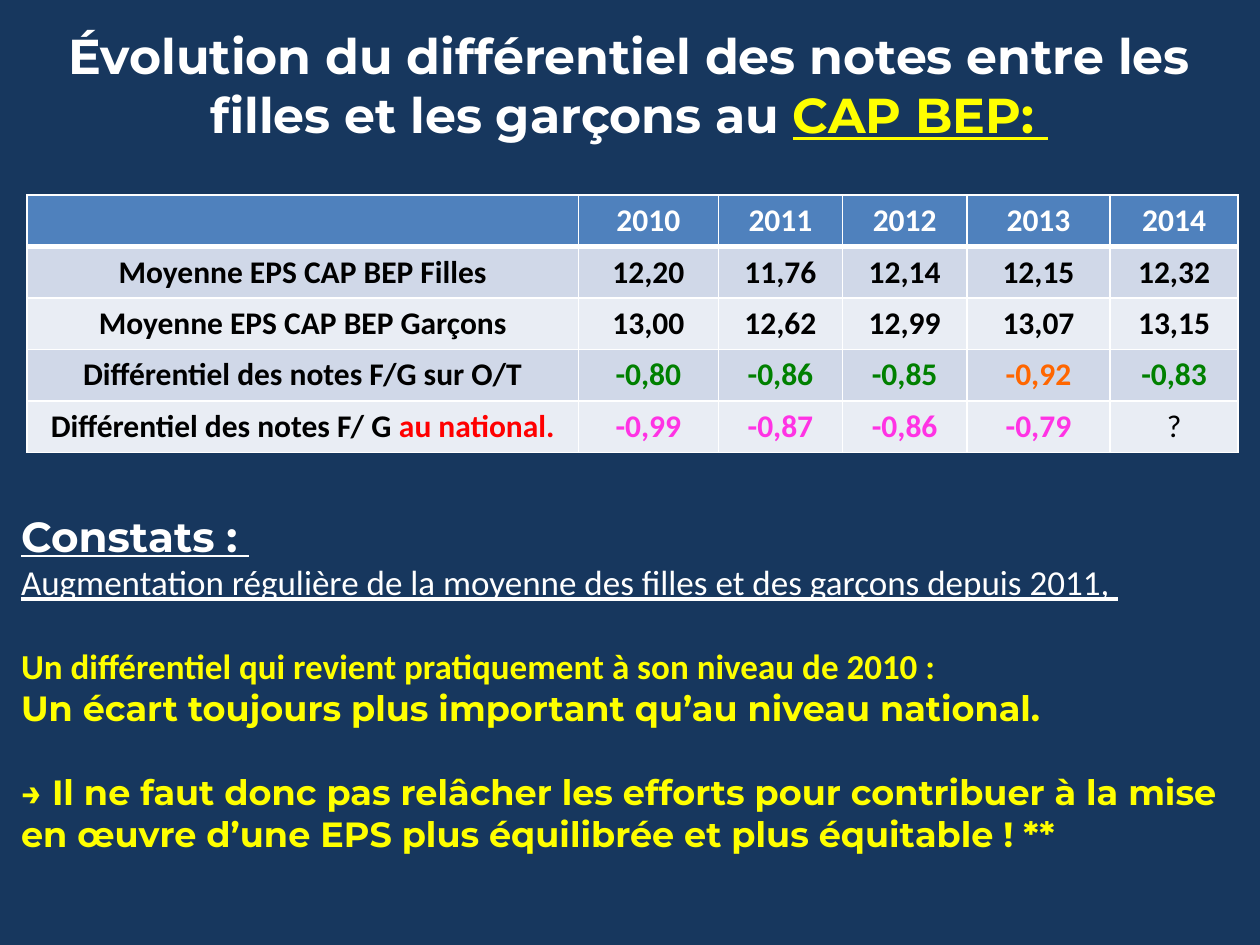
from dataclasses import dataclass

from lxml import etree
from pptx import Presentation
from pptx.dml.color import RGBColor
from pptx.enum.text import MSO_ANCHOR, PP_ALIGN
from pptx.oxml.ns import qn
from pptx.util import Pt

CENTER, LEFT = PP_ALIGN.CENTER, PP_ALIGN.LEFT
MIDDLE = MSO_ANCHOR.MIDDLE


@dataclass(frozen=True)
class Theme:
    background: str = "17375E"
    white: str = "FFFFFF"
    black: str = "000000"
    yellow: str = "FFFF00"
    green: str = "008000"
    orange: str = "FF6600"
    red: str = "FF0000"
    pink: str = "FF33E4"
    header: str = "4F81BD"
    bands: tuple = ("D0D8E8", "E9EDF4")
    heading_font: str = "Montserrat"
    body_font: str = "Calibri"
    title_size: int = 28
    heading_size: int = 24
    body_size: int = 20
    table_size: int = 18


theme = Theme()


def add_run(paragraph, text, font, size, color, bold=True, underline=False):
    run = paragraph.add_run()
    run.text = text
    run.font.name = font
    run.font.size = Pt(size)
    run.font.color.rgb = RGBColor.from_string(color)
    run.font.bold = bold
    run.font.underline = underline


def add_border(cell, side, width):
    line = etree.SubElement(cell._tc.get_or_add_tcPr(), qn(f"a:ln{side}"), w=str(Pt(width)))
    fill = etree.SubElement(line, qn("a:solidFill"))
    etree.SubElement(fill, qn("a:srgbClr"), val=theme.white)


presentation = Presentation()
presentation.slide_width, presentation.slide_height = Pt(720), Pt(540)
slide = presentation.slides.add_slide(presentation.slide_layouts[6])
slide.background.fill.solid()
slide.background.fill.fore_color.rgb = RGBColor.from_string(theme.background)

# Title
title = slide.shapes.add_textbox(Pt(20), Pt(11), Pt(679), Pt(75)).text_frame
title.word_wrap = True
title.paragraphs[0].alignment = CENTER
add_run(title.paragraphs[0],
        "Évolution du différentiel des notes entre les filles et les garçons au ",
        theme.heading_font, theme.title_size, theme.white)
add_run(title.paragraphs[0], "CAP BEP: ",
        theme.heading_font, theme.title_size, theme.yellow, underline=True)

# Table of averages: each row has its texts and the colour of each text
black_row = [theme.black] * 6
rows = [
    (["", "2010", "2011", "2012", "2013", "2014"], [theme.white] * 6),
    (["Moyenne EPS CAP BEP Filles", "12,20", "11,76", "12,14", "12,15", "12,32"], black_row),
    (["Moyenne EPS CAP BEP Garçons", "13,00", "12,62", "12,99", "13,07", "13,15"], black_row),
    (["Différentiel des notes F/G sur O/T", "-0,80", "-0,86", "-0,85", "-0,92", "-0,83"],
     [theme.black] + [theme.green] * 3 + [theme.orange, theme.green]),
    (["Différentiel des notes F/ G ", "-0,99", "-0,87", "-0,86", "-0,79", "?"],
     [theme.black] + [theme.pink] * 4 + [theme.black]),
]
column_widths = [315, 80, 71, 71, 82, 73]
row_height = 29.4
table = slide.shapes.add_table(
    len(rows), len(column_widths), Pt(15.5), Pt(111.5),
    Pt(sum(column_widths)), Pt(row_height * len(rows))).table
for column, width in zip(table.columns, column_widths):
    column.width = Pt(width)
for row_index, (texts, colors) in enumerate(rows):
    table.rows[row_index].height = Pt(row_height)
    fill_color = theme.bands[(row_index - 1) % 2] if row_index else theme.header
    for column_index, (text, color) in enumerate(zip(texts, colors)):
        cell = table.cell(row_index, column_index)
        for side in "LRTB":
            under_header = (row_index, side) in ((0, "B"), (1, "T"))
            add_border(cell, side, 3 if under_header else 1)
        cell.fill.solid()
        cell.fill.fore_color.rgb = RGBColor.from_string(fill_color)
        cell.vertical_anchor = MIDDLE
        paragraph = cell.text_frame.paragraphs[0]
        paragraph.alignment = CENTER
        if text:
            add_run(paragraph, text, theme.body_font, theme.table_size, color, bold=text != "?")
add_run(table.cell(4, 0).text_frame.paragraphs[0], "au national.",
        theme.body_font, theme.table_size, theme.red)

# Findings: text, font, size, colour, bold, underline, space before
findings = [
    ("Constats : ", theme.heading_font, theme.heading_size, theme.white, True, True, 0),
    ("Augmentation régulière de la moyenne des filles et des garçons depuis 2011, ",
     theme.body_font, theme.body_size, theme.white, False, True, 0),
    ("Un différentiel qui revient pratiquement à son niveau de 2010 :",
     theme.body_font, theme.body_size, theme.yellow, True, False, 24),
    ("Un écart toujours plus important qu’au niveau national.",
     theme.heading_font, theme.body_size, theme.yellow, True, False, 0),
    ("→ Il ne faut donc pas relâcher les efforts pour contribuer à la mise en œuvre "
     "d’une EPS plus équilibrée et plus équitable ! **",
     theme.heading_font, theme.body_size, theme.yellow, True, False, 24),
]
findings_frame = slide.shapes.add_textbox(Pt(5), Pt(288), Pt(712), Pt(206)).text_frame
findings_frame.word_wrap = True
for index, (*run_format, space_before) in enumerate(findings):
    paragraph = findings_frame.add_paragraph() if index else findings_frame.paragraphs[0]
    paragraph.alignment = LEFT
    paragraph.space_before = Pt(space_before)
    add_run(paragraph, *run_format)

presentation.save("out.pptx")
